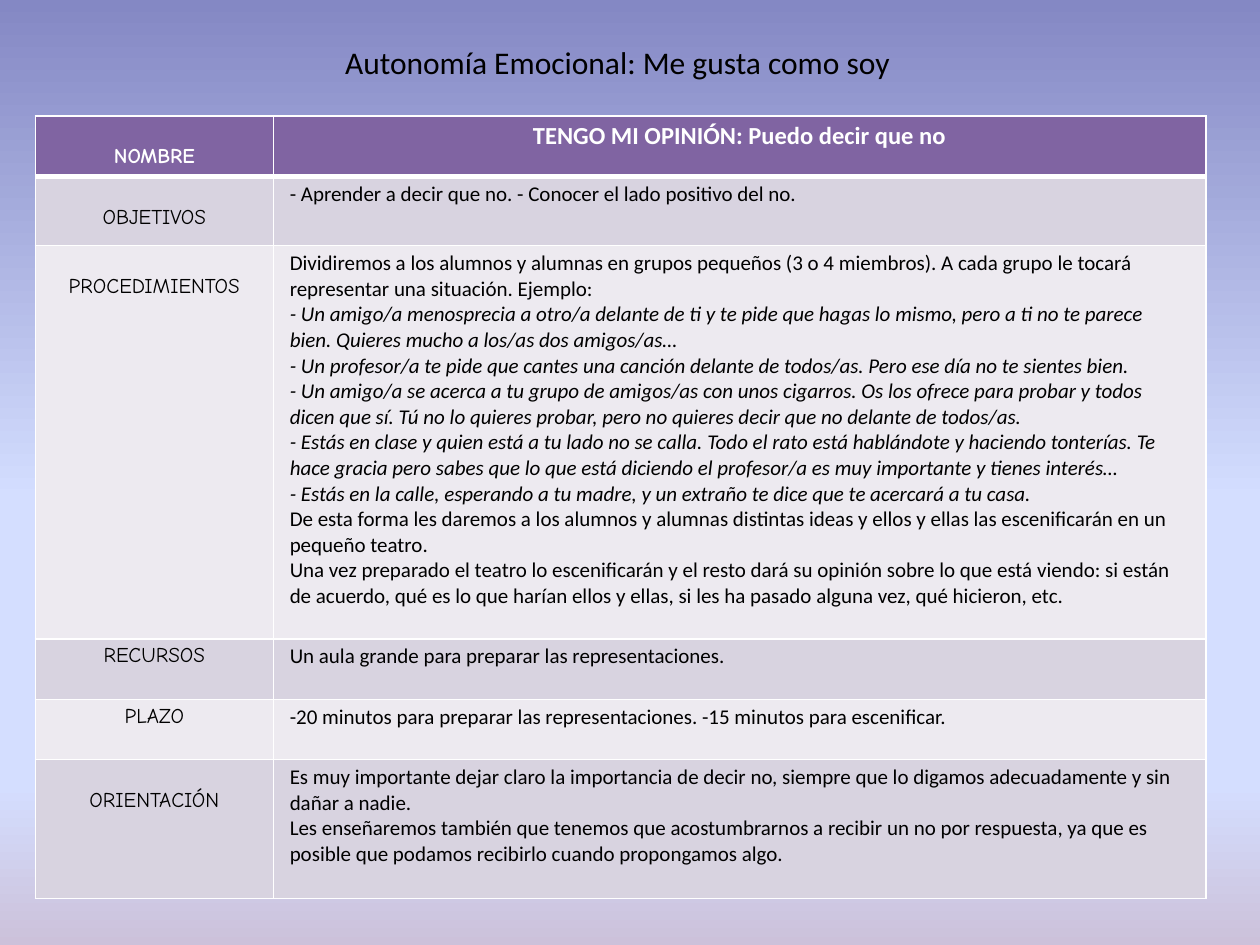
from copy import deepcopy

from lxml import etree
from pptx import Presentation
from pptx import util as u
from pptx.dml.color import RGBColor
from pptx.enum import text
from pptx.oxml.ns import qn

ROWS = [  # height, label, label pushed down one line, paragraphs
    (0.48, "NOMBRE", True, ["TENGO MI OPINIÓN: Puedo decir que no"]),
    (0.55, "OBJETIVOS", True, ["- Aprender a decir que no. - Conocer el lado positivo del no."]),
    (3.12, "PROCEDIMIENTOS", True, [
        "Dividiremos a los alumnos y alumnas en grupos pequeños (3 o 4 miembros). A cada grupo le tocará representar una situación. Ejemplo:",
        "- Un amigo/a menosprecia a otro/a delante de ti y te pide que hagas lo mismo, pero a ti no te parece bien. Quieres mucho a los/as dos amigos/as…",
        "- Un profesor/a te pide que cantes una canción delante de todos/as. Pero ese día no te sientes bien.",
        "- Un amigo/a se acerca a tu grupo de amigos/as con unos cigarros. Os los ofrece para probar y todos dicen que sí. Tú no lo quieres probar, pero no quieres decir que no delante de todos/as.",
        "- Estás en clase y quien está a tu lado no se calla. Todo el rato está hablándote y haciendo tonterías. Te hace gracia pero sabes que lo que está diciendo el profesor/a es muy importante y tienes interés…",
        "- Estás en la calle, esperando a tu madre, y un extraño te dice que te acercará a tu casa.",
        "De esta forma les daremos a los alumnos y alumnas distintas ideas y ellos y ellas las escenificarán en un pequeño teatro.",
        "Una vez preparado el teatro lo escenificarán y el resto dará su opinión sobre lo que está viendo: si están de acuerdo, qué es lo que harían ellos y ellas, si les ha pasado alguna vez, qué hicieron, etc."]),
    (0.48, "RECURSOS", False, ["Un aula grande para preparar las representaciones."]),
    (0.48, "PLAZO", False, ["-20 minutos para preparar las representaciones. -15 minutos para escenificar."]),
    (1.1, "ORIENTACIÓN", True, [
        "Es muy importante dejar claro la importancia de decir no, siempre que lo digamos adecuadamente y sin dañar a nadie.",
        "Les enseñaremos también que tenemos que acostumbrarnos a recibir un no por respuesta, ya que es posible que podamos recibirlo cuando propongamos algo."]),
]
COLUMNS = [1.89, 7.4]
ITALIC_PARAGRAPHS = {("PROCEDIMIENTOS", number) for number in range(1, 6)}
SIDES = ("lnL", "lnR", "lnT", "lnB")


def rgb(color):
    return RGBColor.from_string(color)


def add_run(paragraph, words, size, font, color="000000", bold=False, italic=False):
    run = paragraph.add_run()
    run.text = words
    run.font.size, run.font.name = u.Pt(size), font
    run.font.bold, run.font.italic = bold, italic
    run.font.color.rgb = rgb(color)


presentation = Presentation()
presentation.slide_width, presentation.slide_height = u.Inches(10), u.Inches(7.5)
slide = presentation.slides.add_slide(presentation.slide_layouts[6])

# Background: four colours from top to bottom
background = slide.background.fill
background.gradient()
background.gradient_angle = 270
stop_list = slide.element.find(".//" + qn("a:gsLst"))
while len(stop_list) < 4:
    stop_list.append(deepcopy(stop_list[0]))
stops = [(0, "8488C4"), (0.53, "D4DEFF"), (0.83, "D4DEFF"), (1, "CCC1DA")]
for stop, (position, color) in zip(background.gradient_stops, stops):
    stop.position, stop.color.rgb = position, rgb(color)

# Activity table
table = slide.shapes.add_table(
    len(ROWS), len(COLUMNS), u.Inches(0.28), u.Inches(0.92),
    u.Inches(sum(COLUMNS)), u.Inches(sum(row[0] for row in ROWS))).table
for column, width in zip(table.columns, COLUMNS):
    column.width = u.Inches(width)

for r, (height, label, lowered, paragraphs) in enumerate(ROWS):
    table.rows[r].height = u.Inches(height)
    header = r == 0
    fill = "8064A2" if header else ("EDEAF0", "D8D3E0")[r % 2]
    color = "FFFFFF" if header else "000000"
    for c, lines in enumerate(([label], paragraphs)):
        cell = table.cell(r, c)
        cell.margin_left = cell.margin_right = u.Inches(0.13)
        cell.margin_bottom = u.Inches(0.04)
        cell.margin_top = u.Inches(0.23 if lowered and c == 0 else 0.04)

        properties = cell._tc.get_or_add_tcPr()
        for side in SIDES:
            thick = (r, side) in {(0, "lnB"), (1, "lnT")}
            line = etree.SubElement(properties, qn("a:" + side), w=str(u.Pt(3 if thick else 1)))
            solid = etree.SubElement(line, qn("a:solidFill"))
            etree.SubElement(solid, qn("a:srgbClr"), val="FFFFFF")
        cell.fill.solid()
        cell.fill.fore_color.rgb = rgb(fill)

        for number, words in enumerate(lines):
            frame = cell.text_frame
            paragraph = frame.add_paragraph() if number else frame.paragraphs[0]
            if c == 0 or header:
                paragraph.alignment = text.PP_ALIGN.CENTER
            elif label == "OBJETIVOS":
                paragraph.alignment = text.PP_ALIGN.JUSTIFY
            add_run(paragraph, words, 14 if header and c else 12,
                    "Calibri" if c else "Comic Neue", color, bold=header,
                    italic=c == 1 and (label, number) in ITALIC_PARAGRAPHS)

# Title
title = slide.shapes.add_textbox(u.Inches(2.64), u.Inches(0.29), u.Inches(4.88), u.Inches(0.4))
title.text_frame.word_wrap = True
title.text_frame.auto_size = text.MSO_AUTO_SIZE.SHAPE_TO_FIT_TEXT
add_run(title.text_frame.paragraphs[0], "Autonomía Emocional: Me gusta como soy", 18, "Calibri")

presentation.save("out.pptx")
